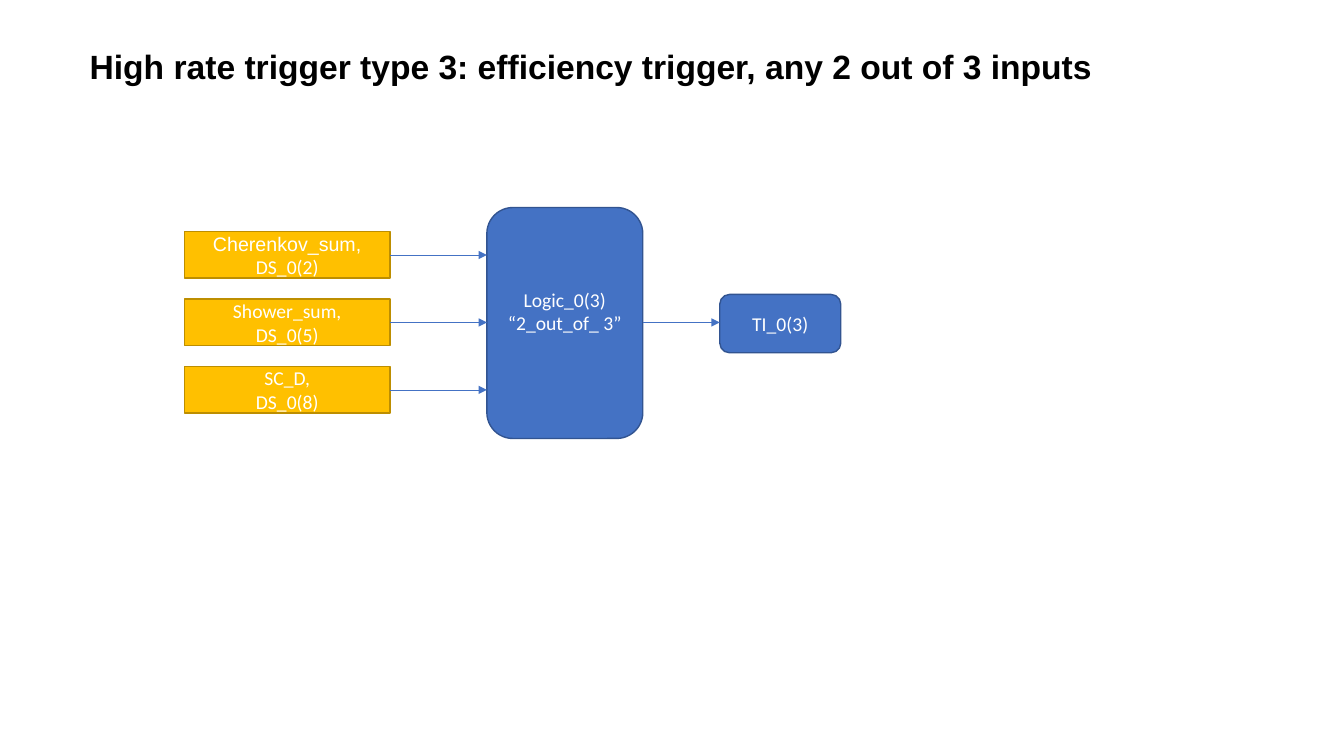
from lxml.etree import SubElement
from pptx import Presentation
from pptx.dml.color import RGBColor
from pptx.enum.shapes import MSO_CONNECTOR, MSO_SHAPE
from pptx.enum.text import MSO_ANCHOR, PP_ALIGN
from pptx.oxml.ns import qn
from pptx.util import Cm, Pt

COLOURS = {
    "title": "000000",
    "label": "FFFFFF",
    "input": "FFC000",
    "input edge": "BD8E00",
    "logic": "4472C4",
    "logic edge": "325491",
}


def colour(name):
    return RGBColor.from_string(COLOURS[name])


def add_block(preset, left, top, width, height, role, lines):
    """Add a filled block with one centred paragraph per (text, font) pair."""
    block = slide.shapes.add_shape(preset, Cm(left), Cm(top), Cm(width), Cm(height))
    block.shadow.inherit = False
    block.fill.solid()
    block.fill.fore_color.rgb = colour(role)
    block.line.color.rgb = colour(role + " edge")
    block.line.width = Pt(1)
    frame = block.text_frame
    frame.word_wrap = True
    frame.vertical_anchor = MSO_ANCHOR.MIDDLE
    for index, (text, font) in enumerate(lines):
        para = frame.add_paragraph() if index else frame.paragraphs[0]
        para.text = text
        para.alignment = PP_ALIGN.CENTER
        para.font.name = font
        para.font.size = Pt(14)
        para.font.color.rgb = colour("label")
    return block


deck = Presentation()
deck.slide_width, deck.slide_height = Cm(33.87), Cm(19.05)
slide = deck.slides.add_slide(deck.slide_layouts[6])

# Title
title = slide.shapes.add_textbox(Cm(2.01), Cm(1.04), Cm(30.94), Cm(1.9))
title.text_frame.word_wrap = True
para = title.text_frame.paragraphs[0]
para.text = "High rate trigger type 3: efficiency trigger, any 2 out of 3 inputs"
para.font.name = "Arial"
para.font.size = Pt(24)
para.font.bold = True
para.font.color.rgb = colour("title")

# Trigger inputs
input_left, input_top, input_width, input_height, input_pitch = 4.65, 5.84, 5.18, 1.17, 1.7
inputs = [
    ("Cherenkov_sum,", "Arial", "DS_0(2)"),
    ("Shower_sum,", "Calibri", "DS_0(5)"),
    ("SC_D,", "Calibri", "DS_0(8)"),
]
input_middles = []
for row, (signal, signal_font, channel) in enumerate(inputs):
    top = input_top + row * input_pitch
    add_block(MSO_SHAPE.RECTANGLE, input_left, top, input_width, input_height,
              "input", [(signal, signal_font), (channel, "Calibri")])
    input_middles.append(top + input_height / 2)

# Logic and trigger output
logic_left, logic_width, output_left = 12.27, 3.93, 18.14
logic = add_block(MSO_SHAPE.ROUNDED_RECTANGLE, logic_left, 5.23, logic_width, 5.82,
                  "logic", [("Logic_0(3)", "Calibri"), ("“2_out_of_ 3”", "Calibri")])
logic.text_frame.margin_bottom = Cm(0.72)
add_block(MSO_SHAPE.ROUNDED_RECTANGLE, output_left, 7.42, 3.05, 1.47,
          "logic", [("TI_0(3)", "Calibri")])

# Arrows: each input to the logic, then the logic to the output
arrows = [(input_left + input_width, logic_left, middle) for middle in input_middles]
arrows.append((logic_left + logic_width, output_left, input_middles[1]))
for start, end, middle in arrows:
    arrow = slide.shapes.add_connector(
        MSO_CONNECTOR.STRAIGHT, Cm(start), Cm(middle), Cm(end), Cm(middle))
    arrow.line.color.rgb = colour("logic")
    arrow.line.width = Pt(0.5)
    SubElement(arrow.line._get_or_add_ln(), qn("a:tailEnd"), type="triangle")
    SubElement(arrow._element.spPr, qn("a:effectLst"))

deck.save("out.pptx")
